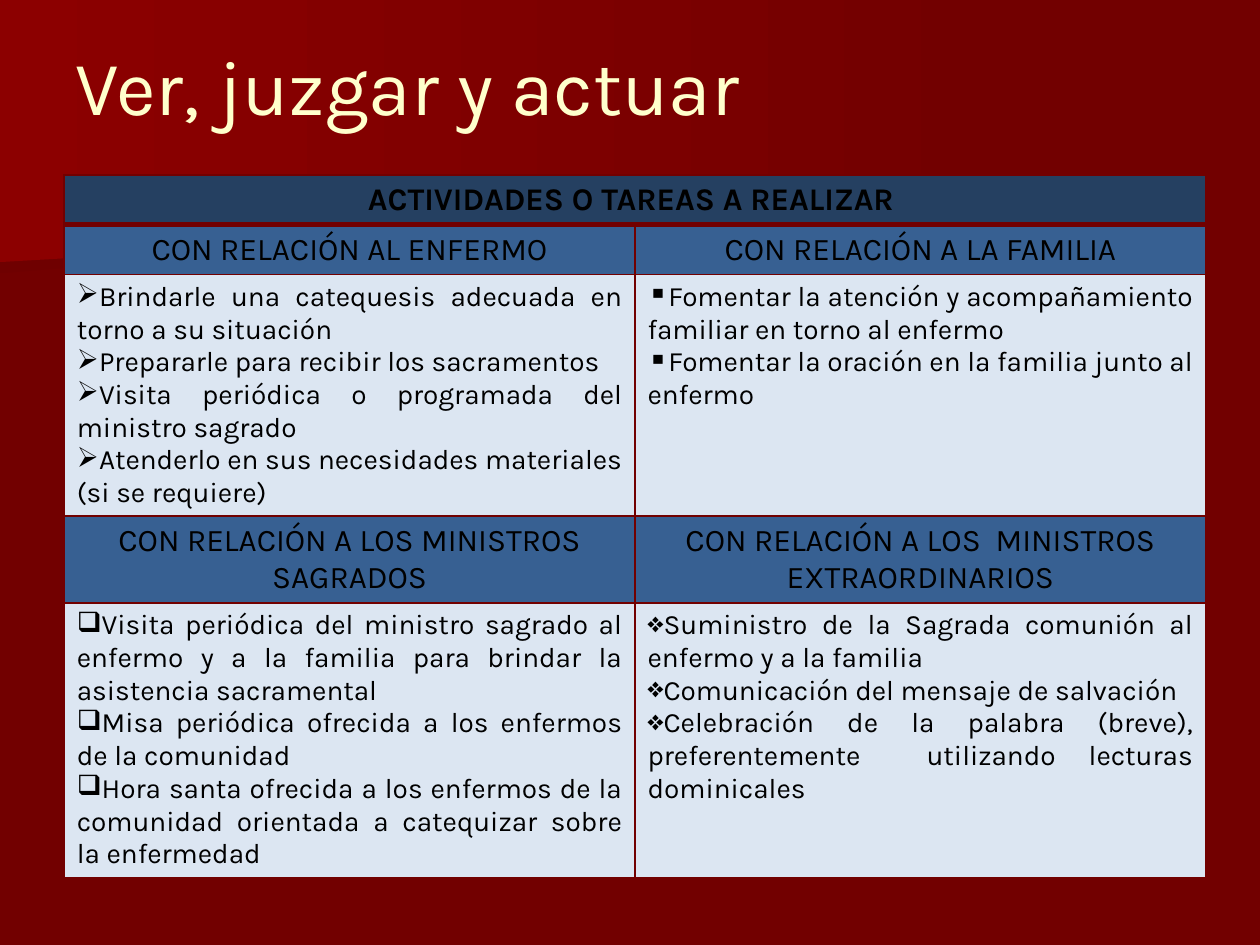
from lxml import etree
from pptx import Presentation
from pptx.dml.color import RGBColor
from pptx.enum.text import MSO_ANCHOR, PP_ALIGN
from pptx.oxml.ns import qn
from pptx.util import Inches, Pt

LEFT, CENTER, JUSTIFY = PP_ALIGN.LEFT, PP_ALIGN.CENTER, PP_ALIGN.JUSTIFY
MIDDLE = MSO_ANCHOR.MIDDLE

FONT = "Karla"
MAROON = RGBColor(0x72, 0x00, 0x00)
DARK_RED = RGBColor(0x6F, 0x00, 0x00)
RED = RGBColor(0x8C, 0x00, 0x00)
CREAM = RGBColor(0xFF, 0xFF, 0xCC)
BLACK = RGBColor(0x00, 0x00, 0x00)
NAVY = RGBColor(0x25, 0x40, 0x61)
BLUE = RGBColor(0x37, 0x60, 0x92)
PALE = RGBColor(0xDC, 0xE6, 0xF2)

COL_WIDTH = 4.53
ROW_HEIGHTS = [0.36, 0.36, 1.75, 0.62, 1.99]

# Each band holds two (heading, bullet, tasks) columns
BANDS = [
    [("CON RELACIÓN AL ENFERMO", "➢", [
        "Brindarle una catequesis adecuada en torno a su situación",
        "Prepararle para recibir los sacramentos",
        "Visita periódica o programada del ministro sagrado",
        "Atenderlo en sus necesidades materiales (si se requiere)"]),
     ("CON RELACIÓN A LA FAMILIA", "▪", [
         "Fomentar la atención y acompañamiento familiar en torno al enfermo",
         "Fomentar la oración en la familia junto al enfermo"])],
    [("CON RELACIÓN A LOS MINISTROS SAGRADOS", "❑", [
        "Visita periódica del ministro sagrado al enfermo y a la familia "
        "para brindar la asistencia sacramental",
        "Misa periódica ofrecida a los enfermos de la comunidad",
        "Hora santa ofrecida a los enfermos de la comunidad orientada a "
        "catequizar sobre la enfermedad"]),
     ("CON RELACIÓN A LOS  MINISTROS EXTRAORDINARIOS", "❖", [
         "Suministro de la Sagrada comunión al enfermo y a la familia",
         "Comunicación del mensaje de salvación",
         "Celebración de la palabra (breve), preferentemente  utilizando "
         "lecturas dominicales"])],
]


class SlideBuilder:
    def __init__(self, slide, font):
        self.s = slide
        self.font = font

    def background(self, color):
        fill = self.s.background.fill
        fill.solid()
        fill.fore_color.rgb = color

    def wedge(self, points, start, end):
        pts = [(Inches(x), Inches(y)) for x, y in points]
        builder = self.s.shapes.build_freeform(*pts[0])
        builder.add_line_segments(pts[1:], close=True)
        sp = builder.convert_to_shape()
        sp.shadow.inherit = False
        sp.line.fill.background()
        sp.fill.gradient()
        sp.fill.gradient_angle = 0
        for stop, color in zip(sp.fill.gradient_stops, (start, end)):
            stop.color.rgb = color

    def format(self, p, size, color, align, bold=False):
        p.alignment = align
        for r in p.runs:
            r.font.name = self.font
            r.font.size = Pt(size)
            r.font.bold = bold
            r.font.color.rgb = color

    def title(self, text, x, y, w, h):
        sp = self.s.shapes.title
        sp.left, sp.top, sp.width, sp.height = map(Inches, (x, y, w, h))
        tf = sp.text_frame
        tf.text = text
        tf.vertical_anchor = MIDDLE
        self.format(tf.paragraphs[0], 44, CREAM, LEFT)
        # Bring the title in front of the wedges
        sp.element.getparent().append(sp.element)

    def table(self, x, y, col_widths, row_heights):
        frame = self.s.shapes.add_table(
            len(row_heights), len(col_widths), Inches(x), Inches(y),
            Inches(sum(col_widths)), Inches(sum(row_heights)))
        table = frame.table
        table.first_row = table.horz_banding = False
        for col, width in zip(table.columns, col_widths):
            col.width = Inches(width)
        for row, height in zip(table.rows, row_heights):
            row.height = Inches(height)
        return table

    def cell(self, cell, lines, fill, size, align, bold=False, bullet=None):
        cell.fill.solid()
        cell.fill.fore_color.rgb = fill
        tf = cell.text_frame
        tf.text = "\n".join(lines)
        for p in tf.paragraphs:
            self.format(p, size, BLACK, align, bold)
            if bullet:
                pPr = p._p.get_or_add_pPr()
                pPr.set("marL", "0")
                pPr.set("indent", "0")
                etree.SubElement(pPr, qn("a:buChar"), char=bullet)

    def borders(self, cell, color, top=1, bottom=1):
        tcPr = cell._tc.get_or_add_tcPr()
        sides = [("L", 1), ("R", 1), ("T", top), ("B", bottom)]
        for i, (side, width) in enumerate(sides):
            ln = etree.Element(qn(f"a:ln{side}"), w=str(Pt(width)))
            solid = etree.SubElement(ln, qn("a:solidFill"))
            etree.SubElement(solid, qn("a:srgbClr"), val=str(color))
            tcPr.insert(i, ln)


def main():
    prs = Presentation()
    prs.slide_width, prs.slide_height = Inches(10), Inches(7.5)
    b = SlideBuilder(prs.slides.add_slide(prs.slide_layouts[5]), FONT)

    # Backdrop
    b.background(MAROON)
    b.wedge([(7.78, 1.53), (0, 2.17), (0, 1.01), (7.79, 1.01)], DARK_RED, MAROON)
    b.wedge([(7.92, 1.62), (0, 2.08), (0, 0), (7.92, 0)], RED, MAROON)

    # Title
    b.title("Ver, juzgar y actuar", 0.5, 0.05, 9, 1.25)

    # Table of tasks
    table = b.table(0.51, 1.39, [COL_WIDTH] * 2, ROW_HEIGHTS)
    table.cell(0, 0).merge(table.cell(0, 1))
    b.cell(table.cell(0, 0), ["ACTIVIDADES O TAREAS A REALIZAR "], NAVY, 18,
           CENTER, bold=True)
    for i, band in enumerate(BANDS):
        row = 1 + 2 * i
        for col, (heading, bullet, tasks) in enumerate(band):
            b.cell(table.cell(row, col), [heading], BLUE, 18, CENTER)
            b.cell(table.cell(row + 1, col), tasks, PALE, 16, JUSTIFY,
                   bullet=bullet)

    # Borders, with a thick rule under the header row
    for row in range(len(ROW_HEIGHTS)):
        for col in range(2):
            b.borders(table.cell(row, col), MAROON,
                      top=3 if row == 1 else 1, bottom=3 if row == 0 else 1)

    prs.save("out.pptx")


if __name__ == "__main__":
    main()
